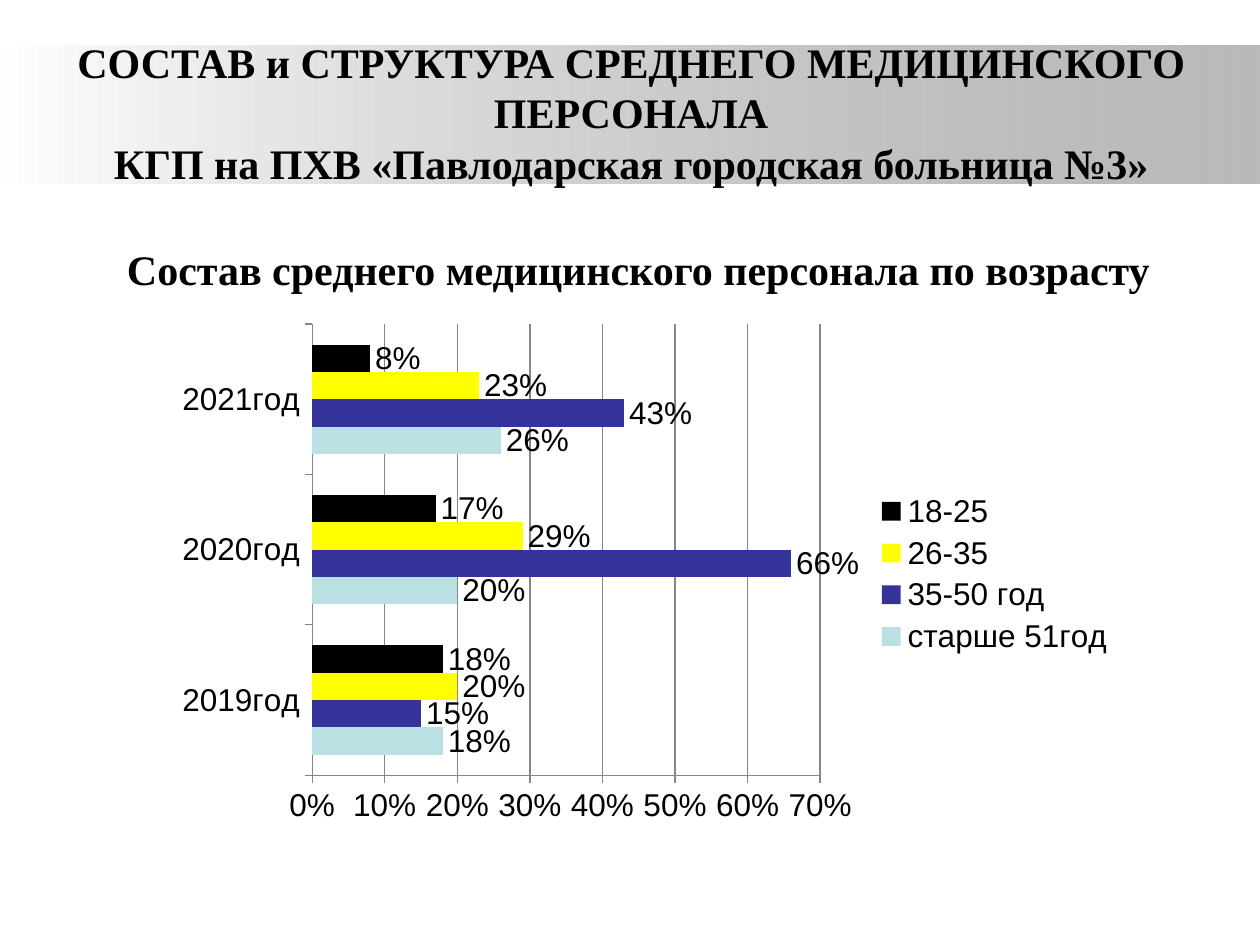
from lxml import etree
from pptx import Presentation
from pptx.chart.data import CategoryChartData
from pptx.dml.color import RGBColor
from pptx.enum.chart import XL_CHART_TYPE, XL_LABEL_POSITION, XL_LEGEND_POSITION, XL_TICK_MARK
from pptx.enum.shapes import MSO_SHAPE
from pptx.enum.text import MSO_ANCHOR, MSO_AUTO_SIZE, PP_ALIGN
from pptx.oxml import parse_xml
from pptx.oxml.ns import nsdecls, qn
from pptx.util import Inches, Pt

BAR = XL_CHART_TYPE.BAR_CLUSTERED
OUTSIDE_END = XL_LABEL_POSITION.OUTSIDE_END
RIGHT = XL_LEGEND_POSITION.RIGHT
TICK_OUT = XL_TICK_MARK.OUTSIDE
RECT = MSO_SHAPE.RECTANGLE
MIDDLE, BOTTOM = MSO_ANCHOR.MIDDLE, MSO_ANCHOR.BOTTOM
NO_FIT = MSO_AUTO_SIZE.NONE
CENTER, LEFT = PP_ALIGN.CENTER, PP_ALIGN.LEFT

COLORS = {
    "text": "000000",
    "band_start": "FFFFFF",
    "band_end": "808080",
    "axis": "868686",
    "over_51": "BBE0E3",
    "age_35_50": "333399",
    "age_26_35": "FFFF00",
    "age_18_25": "000000",
}
YEARS = ["2019год", "2020год", "2021год"]
AGE_GROUPS = [
    ("старше 51год", "over_51", (0.18, 0.20, 0.26)),
    ("35-50 год", "age_35_50", (0.15, 0.66, 0.43)),
    ("26-35", "age_26_35", (0.20, 0.29, 0.23)),
    ("18-25", "age_18_25", (0.18, 0.17, 0.08)),
]
PLOT_LAYOUT = {"x": 0.154, "y": 0.02, "w": 0.527, "h": 0.867}


def rgb(name):
    return RGBColor.from_string(COLORS[name])


def format_font(font, name, size, bold=False):
    font.name = name
    font.size = Pt(size)
    font.bold = bold
    font.color.rgb = rgb("text")


def write_text(sp, text, align=LEFT, anchor=MIDDLE, bottom=0.05):
    tf = sp.text_frame
    tf.word_wrap = True
    tf.auto_size = NO_FIT
    tf.vertical_anchor = anchor
    tf.margin_bottom = Inches(bottom)
    p = tf.paragraphs[0]
    p.text = text
    p.alignment = align
    for r in p.runs:
        format_font(r.font, "Times New Roman", 24, True)


def add_band(s, box):
    sp = s.shapes.add_shape(RECT, *box)
    sp.shadow.inherit = False
    sp.line.fill.background()
    sp.fill.gradient()
    sp.fill.gradient_angle = 0
    start, end = sp.fill.gradient_stops
    start.position, end.position = 0, 1
    start.color.rgb = rgb("band_start")
    end.color.rgb = rgb("band_end")
    color = sp._element.spPr.findall(".//" + qn("a:srgbClr"))[-1]
    etree.SubElement(color, qn("a:alpha")).set("val", "54000")


def place_title(s, box, text):
    sp = s.shapes.title
    sp.left, sp.top, sp.width, sp.height = box
    write_text(sp, text, align=CENTER, bottom=0.4)
    tree = s.shapes._spTree
    tree.remove(sp._element)
    tree.append(sp._element)


def add_subtitle(s, box, text):
    write_text(s.shapes.add_textbox(*box), text, anchor=BOTTOM)


def set_plot_layout(chart):
    plot_area = chart._chartSpace.chart.plotArea
    for old in plot_area.findall(qn("c:layout")):
        plot_area.remove(old)
    sizes = "".join(f'<c:{k} val="{v}"/>' for k, v in PLOT_LAYOUT.items())
    plot_area.insert(0, parse_xml(
        f'<c:layout {nsdecls("c")}><c:manualLayout><c:layoutTarget val="inner"/>'
        f'<c:xMode val="edge"/><c:yMode val="edge"/>{sizes}'
        "</c:manualLayout></c:layout>"))


def format_axis(axis):
    axis.major_tick_mark = TICK_OUT
    axis.format.line.color.rgb = rgb("axis")
    axis.format.line.width = Pt(0.75)
    format_font(axis.tick_labels.font, "Arial", 18)


def add_age_chart(s, box):
    data = CategoryChartData(number_format="0%")
    data.categories = YEARS
    for name, _, values in AGE_GROUPS:
        data.add_series(name, values)
    chart = s.shapes.add_chart(BAR, *box, data).chart
    chart.has_title = False
    format_font(chart.font, "Arial", 18)

    plot = chart.plots[0]
    plot.gap_width = 150
    plot.overlap = 0
    plot.vary_by_categories = False
    for series, (_, color, _) in zip(plot.series, AGE_GROUPS):
        series.invert_if_negative = False
        series.format.fill.solid()
        series.format.fill.fore_color.rgb = rgb(color)
        labels = series.data_labels
        labels.show_value = True
        labels.position = OUTSIDE_END
        labels.number_format = "0%"
        labels.number_format_is_linked = False
        format_font(labels.font, "Arial", 18)

    format_axis(chart.category_axis)
    axis = chart.value_axis
    format_axis(axis)
    axis.minimum_scale, axis.maximum_scale, axis.major_unit = 0, 0.7, 0.1
    axis.tick_labels.number_format = "0%"
    axis.tick_labels.number_format_is_linked = False
    axis.has_major_gridlines = True
    axis.major_gridlines.format.line.color.rgb = rgb("axis")
    axis.major_gridlines.format.line.width = Pt(0.75)

    chart.has_legend = True
    chart.legend.position = RIGHT
    chart.legend.include_in_layout = False
    format_font(chart.legend.font, "Arial", 18)
    set_plot_layout(chart)


def inches(*lengths):
    return [Inches(length) for length in lengths]


def main():
    prs = Presentation()
    prs.slide_width, prs.slide_height = inches(10, 7.5)
    s = prs.slides.add_slide(prs.slide_layouts[5])
    add_band(s, inches(0, 0.36, 10, 1.1))
    place_title(s, inches(0.51, 0.44, 9, 1.25),
                "СОСТАВ и СТРУКТУРА СРЕДНЕГО МЕДИЦИНСКОГО ПЕРСОНАЛА\v"
                "КГП на ПХВ «Павлодарская городская больница №3»")
    add_subtitle(s, inches(0.91, 1.68, 8.66, 0.7),
                 "Состав среднего медицинского персонала по возрасту")
    add_age_chart(s, inches(1.3, 2.49, 7.65, 4.13))
    prs.save("out.pptx")


if __name__ == "__main__":
    main()
